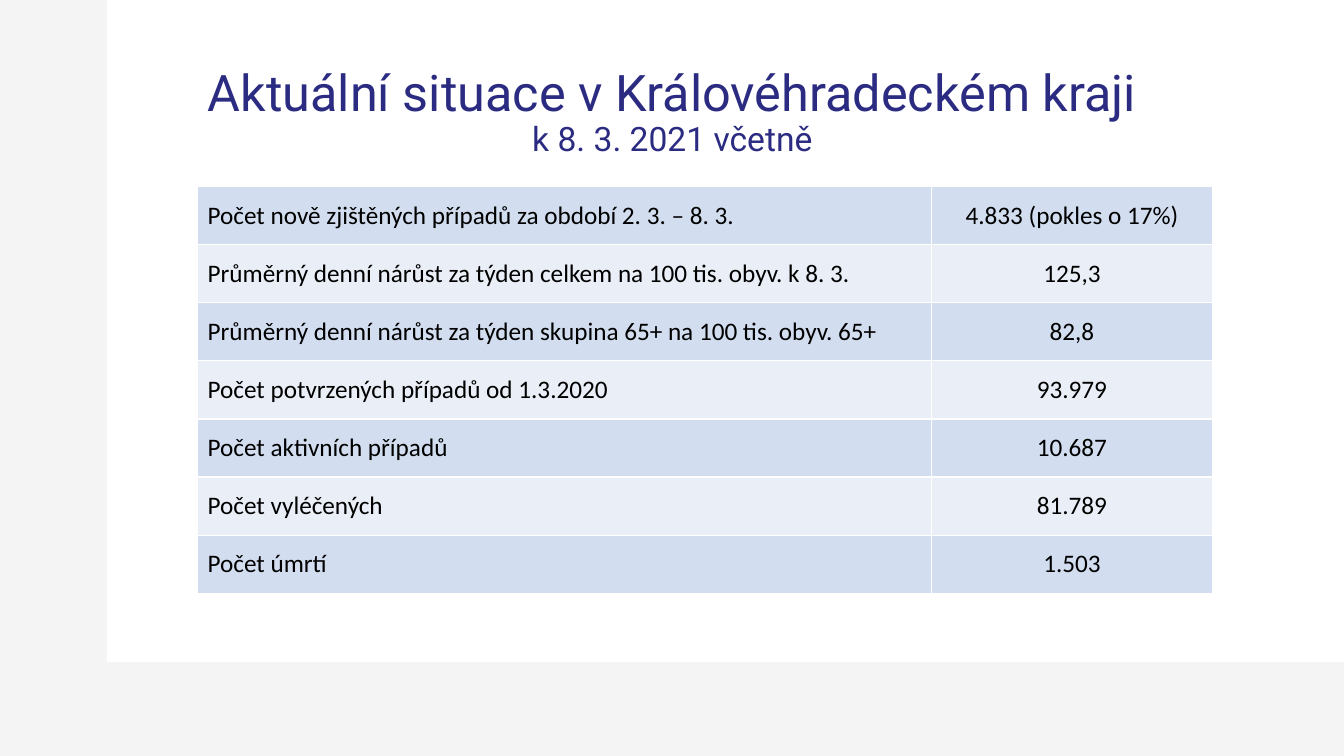
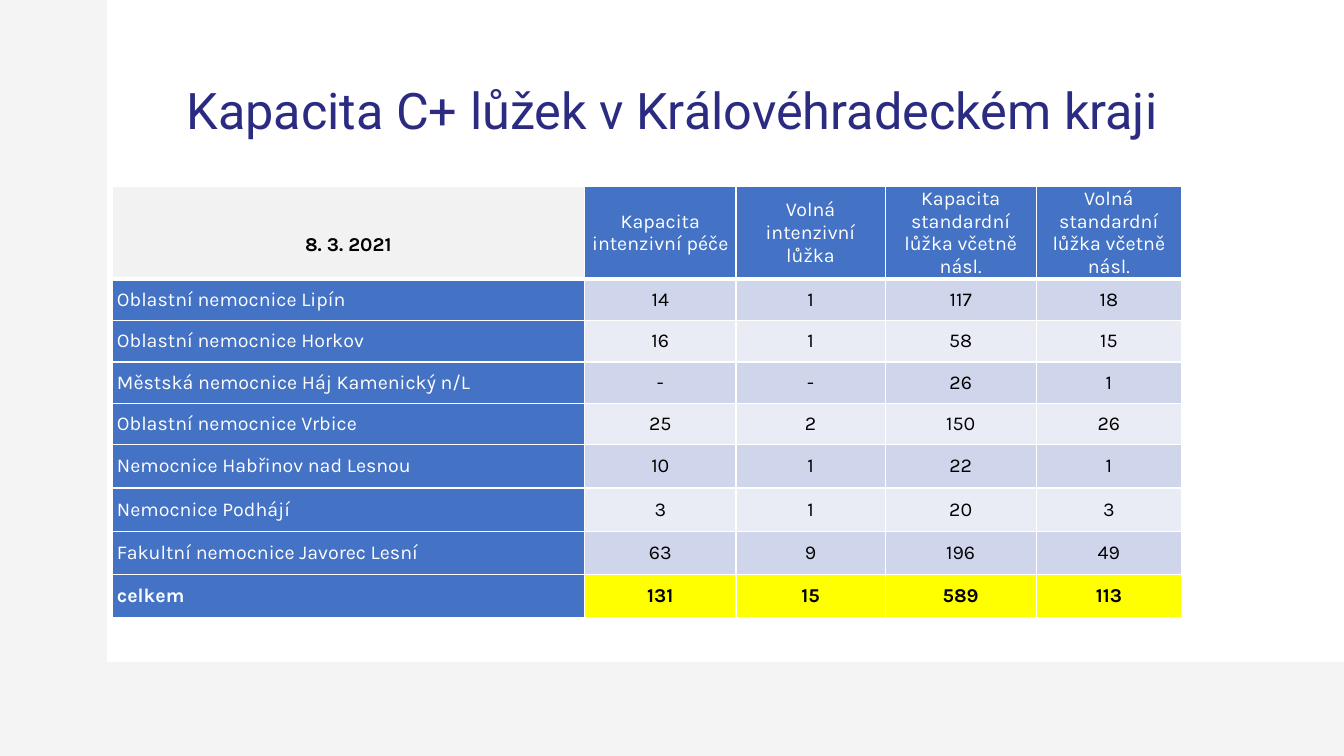
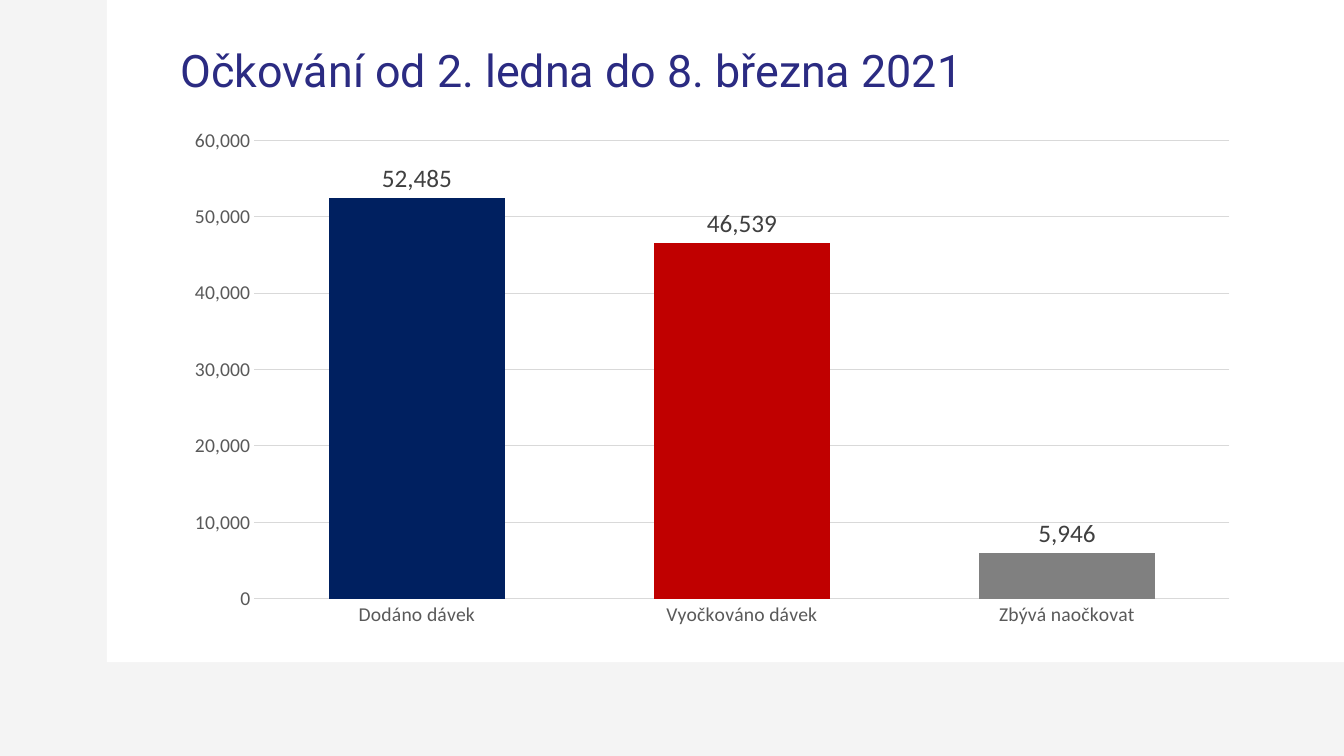
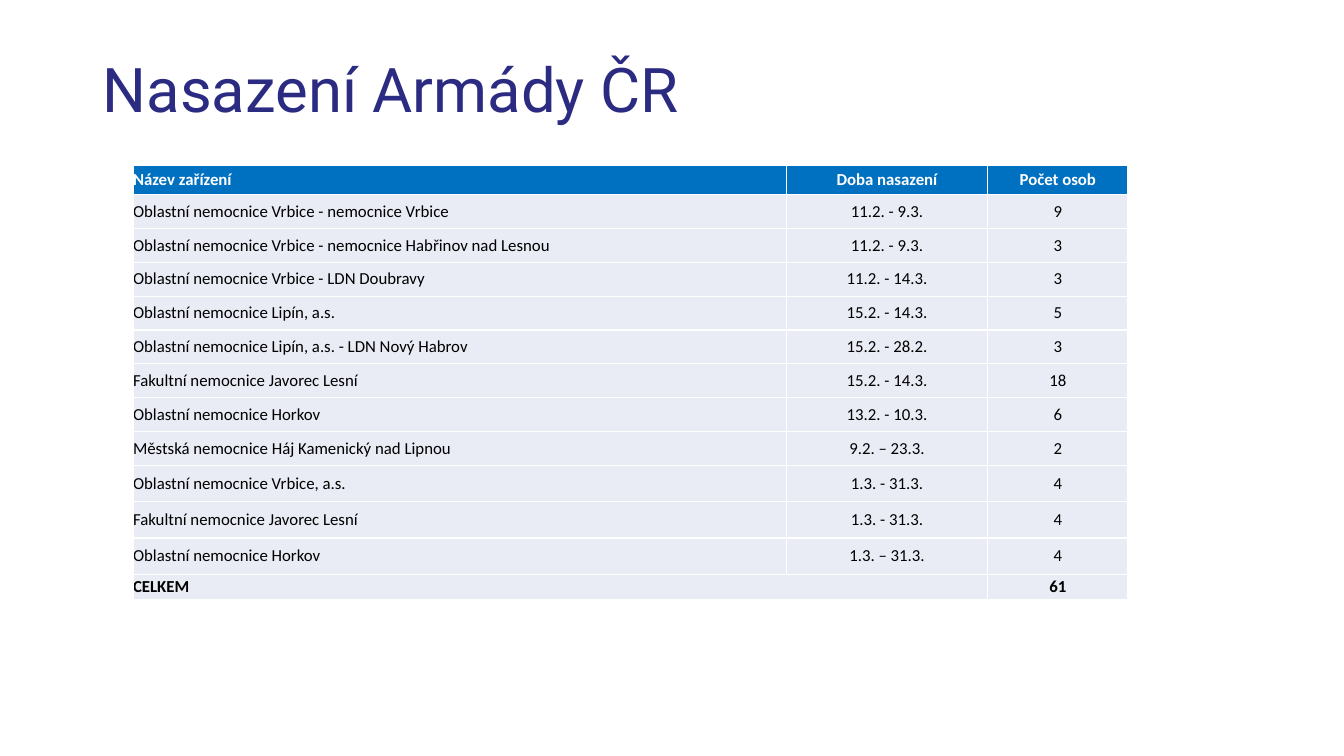
from lxml import etree
from pptx import Presentation
from pptx.chart.data import CategoryChartData
from pptx.dml.color import RGBColor
from pptx.enum.chart import XL_CHART_TYPE, XL_LABEL_POSITION, XL_TICK_MARK
from pptx.enum.shapes import MSO_SHAPE
from pptx.enum.text import MSO_ANCHOR, MSO_AUTO_SIZE, PP_ALIGN
from pptx.oxml.ns import qn
from pptx.util import Inches, Pt

COLUMN_CLUSTERED = XL_CHART_TYPE.COLUMN_CLUSTERED
OUTSIDE_END = XL_LABEL_POSITION.OUTSIDE_END
NO_TICKS = XL_TICK_MARK.NONE
RECTANGLE = MSO_SHAPE.RECTANGLE
MIDDLE = MSO_ANCHOR.MIDDLE
NO_AUTOFIT = MSO_AUTO_SIZE.NONE
LEFT, CENTER = PP_ALIGN.LEFT, PP_ALIGN.CENTER

SLIDE_WIDTH, SLIDE_HEIGHT = Inches(13.33), Inches(7.5)
TITLE_ONLY = 5
TITLE_FONT, BODY_FONT, CAPACITY_FONT = "Roboto", "Calibri", "Karla"
TITLE_BOX = (6.9, 5.33, 86.25, 19.33)

COLORS = {
    "title": "2B2B82",
    "backdrop": "F4F4F4",
    "white": "FFFFFF",
    "black": "000000",
    "summary_dark": "D2DEEF",
    "summary_light": "EAEFF7",
    "corner": "F2F2F2",
    "capacity_header": "4472C4",
    "band_dark": "CFD5EA",
    "band_light": "E9EBF5",
    "total": "FFFF00",
    "army_header": "0070C0",
    "delivered": "002060",
    "vaccinated": "C00000",
    "remaining": "808080",
    "axis_text": "595959",
    "label_text": "404040",
    "grid": "D9D9D9",
}

SUMMARY = [
    ("Počet nově zjištěných případů za období 2. 3. – 8. 3.", "4.833 (pokles o 17%)"),
    ("Průměrný denní nárůst za týden celkem na 100 tis. obyv. k 8. 3.", "125,3"),
    ("Průměrný denní nárůst za týden skupina 65+ na 100 tis. obyv. 65+", "82,8"),
    ("Počet potvrzených případů od 1.3.2020", "93.979"),
    ("Počet aktivních případů", "10.687"),
    ("Počet vyléčených", "81.789"),
    ("Počet úmrtí", "1.503"),
]

CAPACITY = [
    ("8. 3. 2021", "Kapacita intenzivní péče", "Volná intenzivní lůžka",
     "Kapacita standardní lůžka včetně násl.", "Volná standardní lůžka včetně násl."),
    ("Oblastní nemocnice Lipín", "14", "1", "117", "18"),
    ("Oblastní nemocnice Horkov", "16", "1", "58", "15"),
    ("Městská nemocnice Háj Kamenický n/L", "-", "-", "26", "1"),
    ("Oblastní nemocnice Vrbice", "25", "2", "150", "26"),
    ("Nemocnice Habřinov nad Lesnou", "10", "1", "22", "1"),
    ("Nemocnice Podhájí", "3", "1", "20", "3"),
    ("Fakultní nemocnice Javorec Lesní", "63", "9", "196", "49"),
    ("celkem", "131", "15", "589", "113"),
]

DOSES = [
    ("Dodáno dávek", 52485, "delivered"),
    ("Vyočkováno dávek", 46539, "vaccinated"),
    ("Zbývá naočkovat", 5946, "remaining"),
]

ARMY = [
    ("Název zařízení", "Doba nasazení", "Počet osob"),
    ("Oblastní nemocnice Vrbice - nemocnice Vrbice", "11.2. - 9.3.", "9"),
    ("Oblastní nemocnice Vrbice - nemocnice Habřinov nad Lesnou", "11.2. - 9.3.", "3"),
    ("Oblastní nemocnice Vrbice - LDN Doubravy", "11.2. - 14.3.", "3"),
    ("Oblastní nemocnice Lipín, a.s.", "15.2. - 14.3.", "5"),
    ("Oblastní nemocnice Lipín, a.s. - LDN Nový Habrov", "15.2. - 28.2.", "3"),
    ("Fakultní nemocnice Javorec Lesní", "15.2. - 14.3.", "18"),
    ("Oblastní nemocnice Horkov", "13.2. - 10.3.", "6"),
    ("Městská nemocnice Háj Kamenický nad Lipnou", "9.2. – 23.3.", "2"),
    ("Oblastní nemocnice Vrbice, a.s.", "1.3. - 31.3.", "4"),
    ("Fakultní nemocnice Javorec Lesní", "1.3. - 31.3.", "4"),
    ("Oblastní nemocnice Horkov", "1.3. – 31.3.", "4"),
    ("CELKEM", "", "61"),
]


def rgb(name):
    return RGBColor.from_string(COLORS[name])


def across(percent):
    return round(SLIDE_WIDTH * percent / 100)


def down(percent):
    return round(SLIDE_HEIGHT * percent / 100)


def place(box):
    """Turn left, top, width, height in percent of the slide into lengths."""
    left, top, width, height = box
    return across(left), down(top), across(width), down(height)


def style_font(font, name, size, color, bold=False):
    font.name = name
    font.size = Pt(size)
    font.bold = bold
    font.color.rgb = rgb(color)


def fill_solid(fill, color):
    fill.solid()
    fill.fore_color.rgb = rgb(color)


def add_slide(presentation, title, sizes, box=TITLE_BOX, align=CENTER, panel=True, indent=0.1):
    """Add a titled slide; sizes holds one text size per title line."""
    slide = presentation.slides.add_slide(presentation.slide_layouts[TITLE_ONLY])
    fill_solid(slide.background.fill, "backdrop" if panel else "white")
    if panel:
        add_panel(slide)
    shape = slide.shapes.title
    shape.left, shape.top, shape.width, shape.height = place(box)
    frame = shape.text_frame
    frame.text = title
    frame.word_wrap = True
    frame.auto_size = NO_AUTOFIT
    frame.vertical_anchor = MIDDLE
    frame.margin_left = Inches(indent)
    for paragraph, size in zip(frame.paragraphs, sizes):
        paragraph.alignment = align
        paragraph.line_spacing = 0.9
        style_font(paragraph.runs[0].font, TITLE_FONT, size, "title")
    return slide


def add_panel(slide):
    """Add the white sheet that leaves a grey band at the left and the bottom."""
    panel = slide.shapes.add_shape(RECTANGLE, *place((7.96, 0, 92.04, 87.6)))
    panel.shadow.inherit = False
    fill_solid(panel.fill, "white")
    panel.line.fill.background()
    tree = panel.element.getparent()
    tree.remove(panel.element)
    tree.insert(2, panel.element)


def set_borders(cell, bottom=1):
    properties = cell._tc.get_or_add_tcPr()
    for side, points in (("L", 1), ("R", 1), ("T", 1), ("B", bottom)):
        line = etree.SubElement(properties, qn(f"a:ln{side}"), w=str(Pt(points)))
        solid = etree.SubElement(line, qn("a:solidFill"))
        etree.SubElement(solid, qn("a:srgbClr"), val=COLORS["white"])


def add_table(slide, rows, left, top, widths, heights, font, size, look, margins=None):
    """Add a table; look(row, column) gives fill, text colour, bold and bottom border."""
    box = (left, top, sum(widths), sum(heights))
    table = slide.shapes.add_table(len(rows), len(widths), *place(box)).table
    table.first_row = table.horz_banding = False
    for column, width in zip(table.columns, widths):
        column.width = across(width)
    for row, height in zip(table.rows, heights):
        row.height = down(height)
    for row_index, texts in enumerate(rows):
        for column_index, text in enumerate(texts):
            cell = table.cell(row_index, column_index)
            fill, color, bold, bottom = look(row_index, column_index)
            set_borders(cell, bottom)
            fill_solid(cell.fill, fill)
            cell.vertical_anchor = MIDDLE
            if margins is not None:
                cell.margin_left = cell.margin_right = Inches(margins)
                cell.margin_top = cell.margin_bottom = 0
            cell.text = text
            paragraph = cell.text_frame.paragraphs[0]
            paragraph.alignment = CENTER if column_index else LEFT
            for run in paragraph.runs:
                style_font(run.font, font, size, color, bold)
    return table


def summary_look(row, column):
    return ("summary_light" if row % 2 else "summary_dark"), "black", False, 1


def capacity_look(row, column):
    last = row == len(CAPACITY) - 1
    bottom = 1 if row else 3
    if row == 0 and column == 0:
        return "corner", "black", True, bottom
    if row == 0 or column == 0:
        return "capacity_header", "white", last, bottom
    if last:
        return "total", "black", True, bottom
    return ("band_dark" if row % 2 else "band_light"), "black", False, bottom


def army_look(row, column):
    if row == 0:
        return "army_header", "white", True, 1
    return "band_light", "black", row == len(ARMY) - 1, 1


def add_dose_chart(slide, box):
    data = CategoryChartData(number_format="#,##0")
    data.categories = [name for name, _, _ in DOSES]
    data.add_series("Series 1", [value for _, value, _ in DOSES])
    chart = slide.shapes.add_chart(COLUMN_CLUSTERED, *place(box), data).chart
    chart.has_legend = chart.has_title = False
    style_font(chart.font, BODY_FONT, 10, "black")

    plot = chart.plots[0]
    plot.vary_by_categories = False
    plot.gap_width, plot.overlap = 85, -24
    series = plot.series[0]
    fill_solid(series.format.fill, "capacity_header")
    for index, (_, _, color) in enumerate(DOSES):
        fill_solid(series.points[index].format.fill, color)
    labels = series.data_labels
    labels.show_value = True
    labels.position = OUTSIDE_END
    labels.number_format, labels.number_format_is_linked = "#,##0", False
    style_font(labels.font, BODY_FONT, 18, "label_text")

    category_axis, value_axis = chart.category_axis, chart.value_axis
    for axis in (category_axis, value_axis):
        axis.major_tick_mark = axis.minor_tick_mark = NO_TICKS
        style_font(axis.tick_labels.font, BODY_FONT, 14, "axis_text")
    value_axis.minimum_scale, value_axis.maximum_scale = 0, 60000
    value_axis.major_unit = 10000
    value_axis.tick_labels.number_format = "#,##0"
    value_axis.tick_labels.number_format_is_linked = False
    value_axis.format.line.fill.background()
    for line, points in ((category_axis.format.line, 1),
                         (value_axis.major_gridlines.format.line, 0.75)):
        line.color.rgb = rgb("grid")
        line.width = Pt(points)


def main():
    presentation = Presentation()
    presentation.slide_width, presentation.slide_height = SLIDE_WIDTH, SLIDE_HEIGHT

    slide = add_slide(presentation,
                      "Aktuální situace v Královéhradeckém kraji\nk 8. 3. 2021 včetně", (36, 24))
    add_table(slide, SUMMARY, 14.7, 24.67, (54.6, 20.93), [7.69] * len(SUMMARY),
              BODY_FONT, 18, summary_look)

    slide = add_slide(presentation, "Kapacita C+ lůžek v Královéhradeckém kraji", (36,))
    table = add_table(slide, CAPACITY, 8.33, 24.67, (35.18, 11.25, 11.1, 11.25, 10.8),
                      [12.27] + [5.47] * 4 + [5.73] * 4, CAPACITY_FONT, 14, capacity_look, 0.05)
    date_cell = table.cell(0, 0)
    date_cell.margin_top = Inches(0.23)
    date_cell.text_frame.paragraphs[0].alignment = CENTER

    slide = add_slide(presentation, "Očkování od 2. ledna do 8. března 2021", (32,),
                      (11.85, 2.53, 80.18, 14.27), LEFT, indent=0.21)
    add_dose_chart(slide, (12.9, 15.6, 80.18, 68.67))

    slide = add_slide(presentation, "Nasazení Armády ČR", (44,),
                      (6.9, 5.33, 86.25, 13.87), LEFT, panel=False)
    table = add_table(slide, ARMY, 9.9, 21.87, (48.6, 15, 10.43),
                      [3.87] + [4.48] * 8 + [4.8] * 3 + [3.33], BODY_FONT, 12, army_look, 0)
    last = len(ARMY) - 1
    table.cell(last, 0).merge(table.cell(last, 1))

    presentation.save("out.pptx")


if __name__ == "__main__":
    main()
